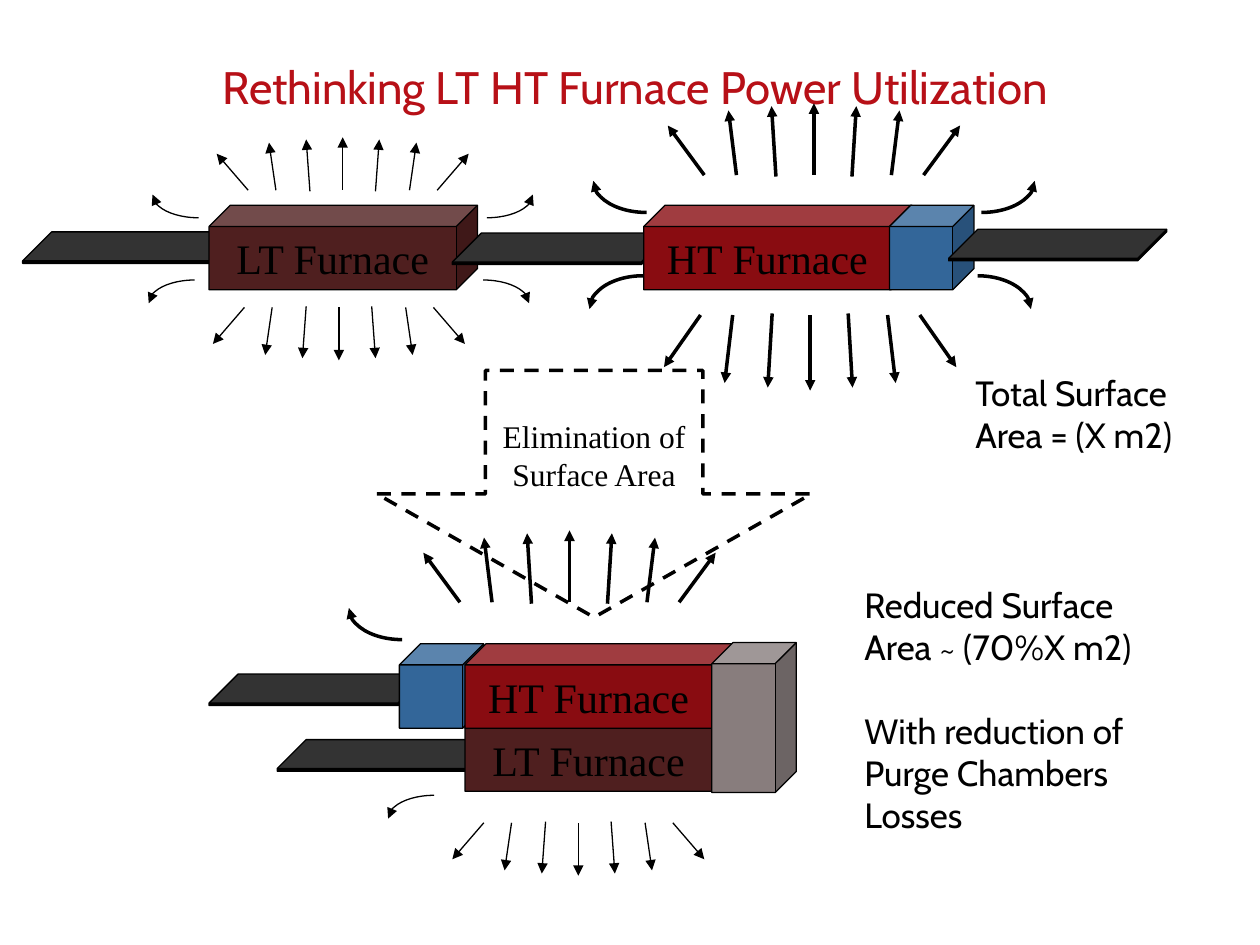
from lxml.etree import SubElement
from pptx import Presentation
from pptx.dml.color import RGBColor
from pptx.enum.dml import MSO_LINE
from pptx.enum.shapes import MSO_CONNECTOR, MSO_SHAPE
from pptx.enum.text import MSO_ANCHOR, PP_ALIGN
from pptx.oxml.ns import qn
from pptx.util import Inches, Pt

# The slide is a grid of 100 columns by 75 rows of square cells.
CELL = Inches(0.1)
COLUMNS, ROWS = 100, 75

COLORS = {
    "title": "B71017", "ink": "000000", "belt": "000000", "lt": "4F1F1F",
    "ht": "890C11", "purge": "336699", "transfer": "887D7D",
}
TITLE = {"size": Pt(26), "name": "Cabin"}
NOTE = {"size": Pt(20), "name": "Cabin"}
FURNACE = {"size": Pt(24), "name": "Times New Roman"}
ARROW_LABEL = {"size": Pt(18), "name": "Times New Roman"}

BELT_SIZE = (17.3, 2.5)
FURNACE_SIZE = (21.3, 6.7)
CHAMBER_SIZE = (6.7, 6.7)
THIN, THICK = 0.75, 2

# Outer, middle and inner rays: tip offset, base offset (cells),
# then tip depth and base depth as shares of the reach.
RAYS = [(10, 7.5, 0.31, 1), (5.85, 5.3, 0.1, 1), (2.9, 2.6, 0.04, 1.02)]


def cells(*values):
    return [round(value * CELL) for value in values]


def rgb(name):
    return RGBColor.from_string(COLORS[name])


def set_values(target, values):
    for attribute, value in values.items():
        setattr(target, attribute, value)


def write(frame, lines, font, color="ink", **paragraph_format):
    for index, line in enumerate(lines):
        paragraph = frame.paragraphs[0] if index == 0 else frame.add_paragraph()
        set_values(paragraph, paragraph_format)
        if index == 0:
            paragraph.space_before = Pt(0)
        run = paragraph.add_run()
        run.text = line
        set_values(run.font, font)
        run.font.color.rgb = rgb(color)


def outline(part, weight):
    part.line.color.rgb = rgb("ink")
    part.line.width = Pt(weight)


def add_arrowhead(part, end):
    SubElement(part.line._get_or_add_ln(), qn(f"a:{end}"), type="triangle")


def cube(slide, position, size, color, label=None, depth=0.25):
    block = slide.shapes.add_shape(MSO_SHAPE.CUBE, *cells(*position, *size))
    block.adjustments[0] = depth
    block.shadow.inherit = False
    block.fill.solid()
    block.fill.fore_color.rgb = rgb(color)
    outline(block, THIN)
    if label:
        set_values(block.text_frame, {
            "word_wrap": False, "vertical_anchor": MSO_ANCHOR.MIDDLE})
        write(block.text_frame, [label], FURNACE, alignment=PP_ALIGN.CENTER)


def belt(slide, position):
    cube(slide, position, BELT_SIZE, "belt", depth=0.92)


def ray(slide, tip, base, weight):
    arrow = slide.shapes.add_connector(
        MSO_CONNECTOR.STRAIGHT, *cells(*tip, *base))
    outline(arrow, weight)
    add_arrowhead(arrow, "headEnd")
    SubElement(arrow._element.spPr, qn("a:effectLst"))


def curl(slide, position, size, weight, flips):
    arc = slide.shapes.add_shape(MSO_SHAPE.ARC, *cells(*position, *size))
    arc.rotation = 180
    arc.shadow.inherit = False
    arc.fill.background()
    outline(arc, weight)
    add_arrowhead(arc, "tailEnd")
    for flip in flips:
        arc._element.spPr.xfrm.set(flip, "1")


def heat_fan(slide, center, tip, reach, weight, sides=(-1, 1)):
    """Draw seven rays and the side curls; a negative reach points down."""
    spread = 1 if weight == THIN else 1.16
    ray(slide, (center, tip), (center, tip + reach), weight)
    for side in (-1, 1):
        for tip_x, base_x, tip_depth, base_depth in RAYS:
            ray(slide,
                (center + side * spread * tip_x, tip + reach * tip_depth),
                (center + side * spread * base_x, tip + reach * base_depth),
                weight)
    width, height = 7.3 * spread, 0.88 * abs(reach)
    near = tip + 0.64 * reach
    top = near if reach > 0 else near - height
    for side in sides:
        left = center + side * 15.1 * spread - (width if side > 0 else 0)
        flips = ["flipH"] * (side > 0) + ["flipV"] * (reach < 0)
        curl(slide, (left, top), (width, height), weight, flips)


def text_box(slide, area, lines, font, color="ink", indent=1, wrap=True,
             **paragraph_format):
    frame = slide.shapes.add_textbox(*cells(*area)).text_frame
    set_values(frame, {"word_wrap": wrap, "margin_left": cells(indent)[0]})
    write(frame, lines, font, color, **paragraph_format)


def elimination_arrow(slide):
    arrow = slide.shapes.add_shape(
        MSO_SHAPE.DOWN_ARROW, *cells(29.9, 29.4, 34.5, 19.6))
    arrow.shadow.inherit = False
    arrow.fill.background()
    outline(arrow, THICK)
    arrow.line.dash_style = MSO_LINE.DASH
    set_values(arrow.text_frame, {
        "word_wrap": False, "vertical_anchor": MSO_ANCHOR.TOP,
        "margin_top": cells(3.7)[0]})
    write(arrow.text_frame, ["Elimination of", "Surface Area"], ARROW_LABEL,
          alignment=PP_ALIGN.CENTER)


def separate_furnaces(slide):
    belt(slide, (1.8, 18.4))
    cube(slide, (16.6, 16.3), FURNACE_SIZE, "lt", "LT Furnace")
    belt(slide, (35.9, 18.5))
    cube(slide, (51.1, 16.3), FURNACE_SIZE, "ht", "HT Furnace")
    cube(slide, (70.6, 16.3), CHAMBER_SIZE, "purge")
    belt(slide, (75.3, 18.2))
    heat_fan(slide, 27.2, 10.9, 4.2, THIN)
    heat_fan(slide, 26.9, 28.6, -4.2, THIN)
    heat_fan(slide, 64.6, 8.2, 5.7, THICK)
    heat_fan(slide, 64.3, 31, -6, THICK)


def stacked_furnaces(slide):
    belt(slide, (22, 58.7))
    cube(slide, (36.9, 56.1), FURNACE_SIZE, "lt", "LT Furnace")
    belt(slide, (16.6, 53.5))
    cube(slide, (31.7, 51.1), CHAMBER_SIZE, "purge")
    cube(slide, (36.9, 51.1), FURNACE_SIZE, "ht", "HT Furnace")
    cube(slide, (56.5, 51), (6.7, 11.9), "transfer")
    heat_fan(slide, 45.2, 42.1, 5.7, THICK, sides=[-1])
    heat_fan(slide, 45.9, 69.5, -4.2, THIN, sides=[-1])


def main():
    deck = Presentation()
    deck.slide_width, deck.slide_height = cells(COLUMNS, ROWS)
    slide = deck.slides.add_slide(deck.slide_layouts[6])
    text_box(slide, (14.2, 4.7, 72.5, 4.9),
             ["Rethinking LT HT Furnace Power Utilization"], TITLE, "title",
             wrap=False, alignment=PP_ALIGN.CENTER, line_spacing=0.9)
    separate_furnaces(slide)
    stacked_furnaces(slide)
    text_box(slide, (72.7, 29, 23.9, 7.7),
             ["Total Surface Area = (X m2)"], NOTE, indent=4.7)
    text_box(slide, (63.9, 45.8, 29.1, 21.2),
             ["Reduced Surface Area ~ (70%X m2)",
              "With reduction of Purge Chambers Losses"],
             NOTE, indent=4.7, space_before=Pt(24))
    elimination_arrow(slide)
    deck.save("out.pptx")


if __name__ == "__main__":
    main()
